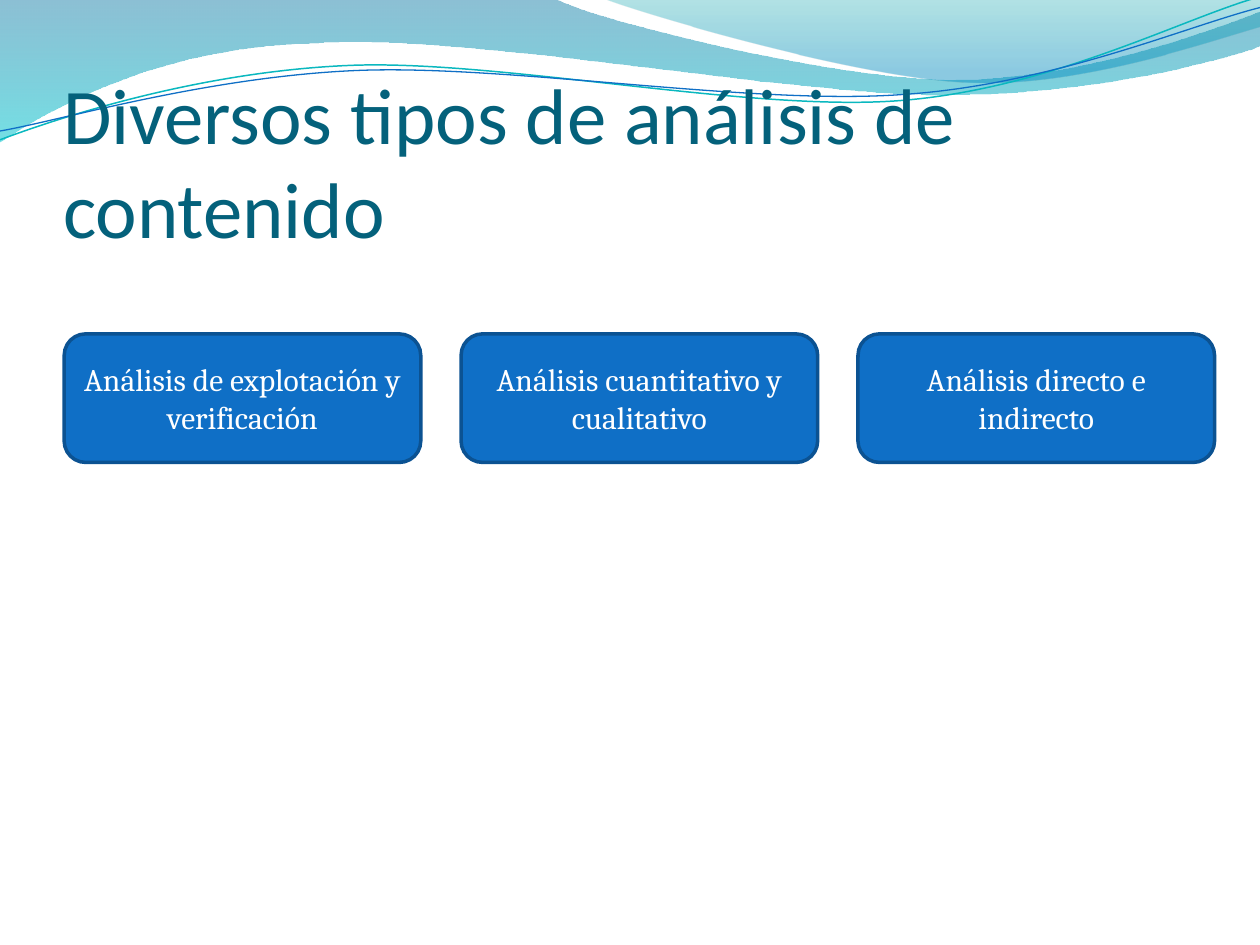
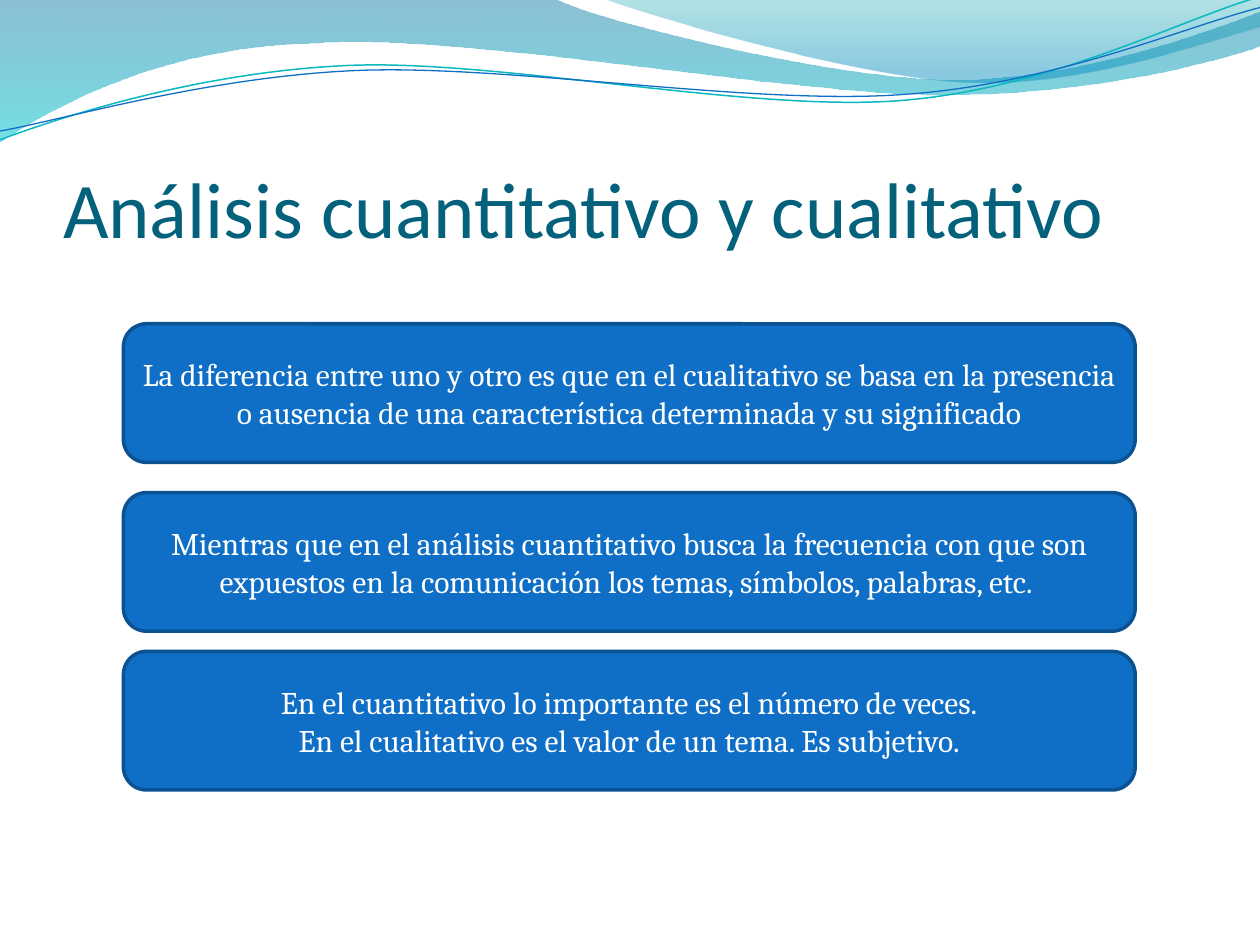
from lxml import etree
from pptx import Presentation
from pptx.dml.color import RGBColor
from pptx.enum.shapes import MSO_SHAPE
from pptx.enum.text import MSO_ANCHOR, MSO_AUTO_SIZE, PP_ALIGN
from pptx.oxml.ns import qn
from pptx.util import Inches, Pt

ROUNDED = MSO_SHAPE.ROUNDED_RECTANGLE
MIDDLE, BOTTOM = MSO_ANCHOR.MIDDLE, MSO_ANCHOR.BOTTOM
LEFT, CENTER = PP_ALIGN.LEFT, PP_ALIGN.CENTER
NO_AUTOFIT = MSO_AUTO_SIZE.NONE
TITLE_ONLY = 5

BLUE, DARK_BLUE, WHITE = "0F6FC6", "0B5292", "FFFFFF"
TITLE_COLOR, TEAL = "04617B", "0AB8BF"

# Each outline is a start point followed by segments: two numbers give a
# straight line, six give a cubic curve. Stops are (position, colour, opacity %).
BANDS = [
    ([(0, 0), (4.4, -0.01), (4.76, 0.17, 6.64, 0.63, 7.58, 0.63),
      (8.53, 0.63, 9.58, 0.26, 10, 0.09), (10.01, 0.36),
      (9.83, 0.44, 8.7, 0.76, 7.46, 0.75), (6.22, 0.75, 3.82, 0.28, 2.57, 0.34),
      (1.29, 0.36, 0.46, 0.83, -0.01, 1.13), (0, 0)],
     [(0, "0074A1", 45), (1, "00C6CF", 55)]),
    ([(4.79, -0.01), (5.09, 0.11, 6.82, 0.62, 7.69, 0.65),
      (8.56, 0.69, 9.61, 0.32, 10, 0.21), (10, 0), (4.79, -0.01)],
     [(0, "00A1A9", 30), (0.8, "008BBF", 45)]),
]
WAVE_LINES = [
    ([(0, 1.11), (0.48, 0.93, 1.58, 0.57, 2.77, 0.52),
      (3.95, 0.47, 5.93, 0.89, 7.13, 0.8), (8.33, 0.71, 9.38, 0.15, 9.98, -0.02)],
     TEAL, 0.85),
    ([(0, 1.04), (0.47, 0.96, 1.64, 0.61, 2.83, 0.56),
      (4.03, 0.51, 5.97, 0.84, 7.17, 0.75), (8.36, 0.67, 9.41, 0.21, 10, 0.06)],
     BLUE, 0.75),
]

# Each slide: title, box size, then (left, top, text) for every box.
SLIDES = [
    ("Diversos tipos de análisis de contenido", (2.83, 1.02),
     [(0.51 + 3.15 * column, 2.65, text) for column, text in enumerate([
         "Análisis de explotación y verificación",
         "Análisis cuantitativo y cualitativo",
         "Análisis directo e indirecto"])]),
    ("Análisis cuantitativo y cualitativo", (8.03, 1.1),
     [(0.98, 2.57, "La diferencia entre uno y otro es que en el cualitativo se basa en la "
       "presencia o ausencia de una característica determinada y su significado"),
      (0.98, 3.91, "Mientras que en el análisis cuantitativo busca la frecuencia con que "
       "son expuestos en la comunicación los temas, símbolos, palabras, etc. "),
      (0.98, 5.17, "En el cuantitativo lo importante es el número de veces.\n"
       "En el cualitativo es el valor de un tema. Es subjetivo.")]),
]


def rgb(color):
    return RGBColor.from_string(color)


def add_outline(slide, outline, close):
    """Draw a freeform through all points, then turn each triple into a cubic curve."""
    start, *segments = outline
    points = [(Inches(x), Inches(y)) for segment in segments
              for x, y in zip(segment[::2], segment[1::2])]
    builder = slide.shapes.build_freeform(Inches(start[0]), Inches(start[1]))
    builder.add_line_segments(points, close=close)
    shape = builder.convert_to_shape()
    shape.shadow.inherit = False
    straight_lines = iter(shape.element.xpath(".//a:lnTo"))
    for segment in segments:
        first = next(straight_lines)
        if len(segment) == 6:
            first.tag = qn("a:cubicBezTo")
            for _ in range(2):
                control = next(straight_lines)
                first.append(control[0])
                control.getparent().remove(control)
    return shape


presentation = Presentation()
presentation.slide_width, presentation.slide_height = Inches(10), Inches(7.5)
layout = presentation.slide_layouts[TITLE_ONLY]
slides = [presentation.slides.add_slide(layout) for _ in SLIDES]

# Wave header: drawn once, then moved to the layout that both slides share
for outline, stops in BANDS:
    band = add_outline(slides[0], outline, close=True)
    band.line.fill.background()
    band.fill.gradient()
    band.fill.gradient_angle = 270
    for gradient_stop, (position, color, _) in zip(band.fill.gradient_stops, stops):
        gradient_stop.position = position
        gradient_stop.color.rgb = rgb(color)
    color_elements = band.element.xpath("p:spPr/a:gradFill//a:srgbClr")
    for color_element, (_, _, opacity) in zip(color_elements, stops):
        etree.SubElement(color_element, qn("a:alpha"), val=str(opacity * 1000))
    layout.shapes.element.append(band.element)

for outline, color, width in WAVE_LINES:
    wave_line = add_outline(slides[0], outline, close=False)
    wave_line.fill.background()
    wave_line.line.color.rgb = rgb(color)
    wave_line.line.width = Pt(width)
    layout.shapes.element.append(wave_line.element)

for slide, (title_text, (box_width, box_height), boxes) in zip(slides, SLIDES):
    title = slide.shapes.title
    title.left, title.top = Inches(0.5), Inches(0.77)
    title.width, title.height = Inches(9.08), Inches(1.25)
    frame = title.text_frame
    frame.text = title_text
    frame.auto_size = NO_AUTOFIT
    frame.vertical_anchor = BOTTOM
    frame.margin_left = frame.margin_right = frame.margin_bottom = 0
    frame.margin_top = Inches(0.05)
    paragraph = frame.paragraphs[0]
    paragraph.alignment = LEFT
    font = paragraph.runs[0].font
    font.name, font.size = "Calibri", Pt(45)
    font.color.rgb = rgb(TITLE_COLOR)

    for left, top, text in boxes:
        box = slide.shapes.add_shape(ROUNDED, Inches(left), Inches(top),
                                     Inches(box_width), Inches(box_height))
        box.shadow.inherit = False
        box.fill.solid()
        box.fill.fore_color.rgb = rgb(BLUE)
        box.line.color.rgb = rgb(DARK_BLUE)
        box.line.width = Pt(2)
        box.text_frame.text = text
        box.text_frame.word_wrap = True
        box.text_frame.vertical_anchor = MIDDLE
        for paragraph in box.text_frame.paragraphs:
            paragraph.alignment = CENTER
            font = paragraph.runs[0].font
            font.name, font.size = "Cambria", Pt(18)
            font.color.rgb = rgb(WHITE)

presentation.save("out.pptx")
